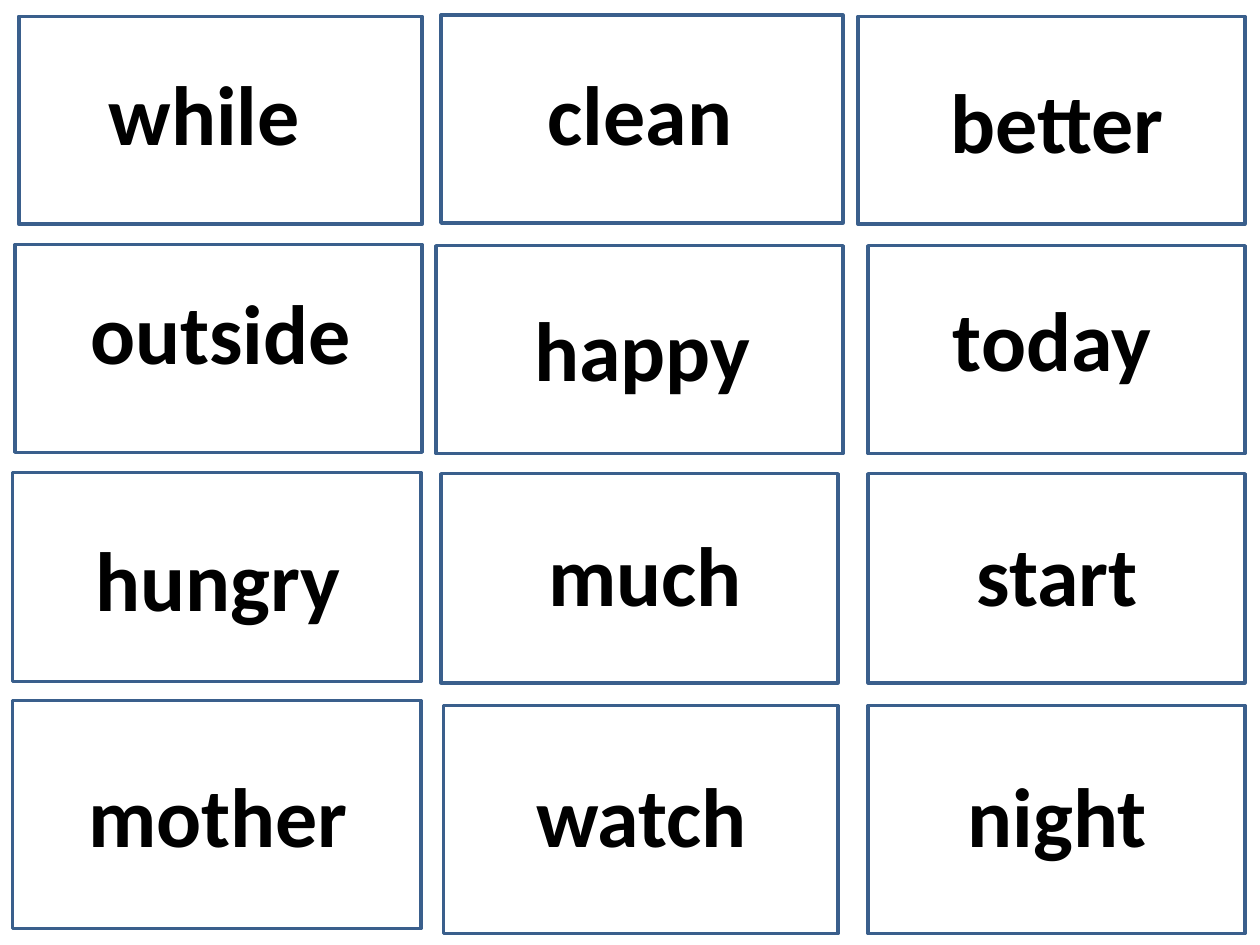
from pptx import Presentation
from pptx import util as u
from pptx.dml.color import RGBColor
from pptx.enum import shapes, text

BLUE = RGBColor(0x3A, 0x5F, 0x8C)
BLACK = RGBColor(0, 0, 0)
WORD_SIZE = (2.68, 0.91)

# word, card (left, top, width, height), word position (left, top)
CARDS = [
    ("while", (0.15, 0.13, 3.2, 1.65), (0.28, 0.44)),
    ("clean", (3.5, 0.12, 3.19, 1.65), (3.74, 0.44)),
    ("better", (6.81, 0.13, 3.07, 1.65), (7.05, 0.5)),
    ("outside", (0.12, 1.94, 3.23, 1.65), (0.41, 2.18)),
    ("happy", (3.46, 1.95, 3.23, 1.65), (3.76, 2.31)),
    ("today", (6.89, 1.95, 2.99, 1.65), (7.01, 2.23)),
    ("hungry", (0.1, 3.75, 3.24, 1.66), (0.39, 4.14)),
    ("much", (3.5, 3.76, 3.15, 1.66), (3.78, 4.1)),
    ("start", (6.89, 3.76, 2.99, 1.66), (7.05, 4.1)),
    ("mother", (0.1, 5.56, 3.24, 1.81), (0.39, 6.01)),
    ("watch", (3.52, 5.6, 3.13, 1.81), (3.75, 6.01)),
    ("night", (6.89, 5.6, 2.99, 1.81), (7.05, 6.01)),
]


def add_card(page, bounds):
    """Draw the outlined rectangle of one word card."""
    card = page.shapes.add_shape(
        shapes.MSO_SHAPE.RECTANGLE, *map(u.Inches, bounds))
    card.shadow.inherit = False
    card.fill.background()
    card.line.color.rgb = BLUE
    card.line.width = u.Pt(2)


def add_word(page, word, position):
    """Write one centred bold word."""
    box = page.shapes.add_textbox(*map(u.Inches, position + WORD_SIZE))
    frame = box.text_frame
    frame.word_wrap = True
    frame.auto_size = text.MSO_AUTO_SIZE.SHAPE_TO_FIT_TEXT
    para = frame.paragraphs[0]
    para.alignment = text.PP_ALIGN.CENTER
    span = para.add_run()
    span.text = word
    span.font.name = "Calibri"
    span.font.size = u.Pt(48)
    span.font.bold = True
    span.font.color.rgb = BLACK


def main():
    """Build the page of word cards and save it."""
    deck = Presentation()
    deck.slide_width, deck.slide_height = u.Inches(10), u.Inches(7.5)
    page = deck.slides.add_slide(deck.slide_layouts[6])
    for word, bounds, position in CARDS:
        add_card(page, bounds)
        add_word(page, word, position)
    deck.save("out.pptx")


if __name__ == "__main__":
    main()
